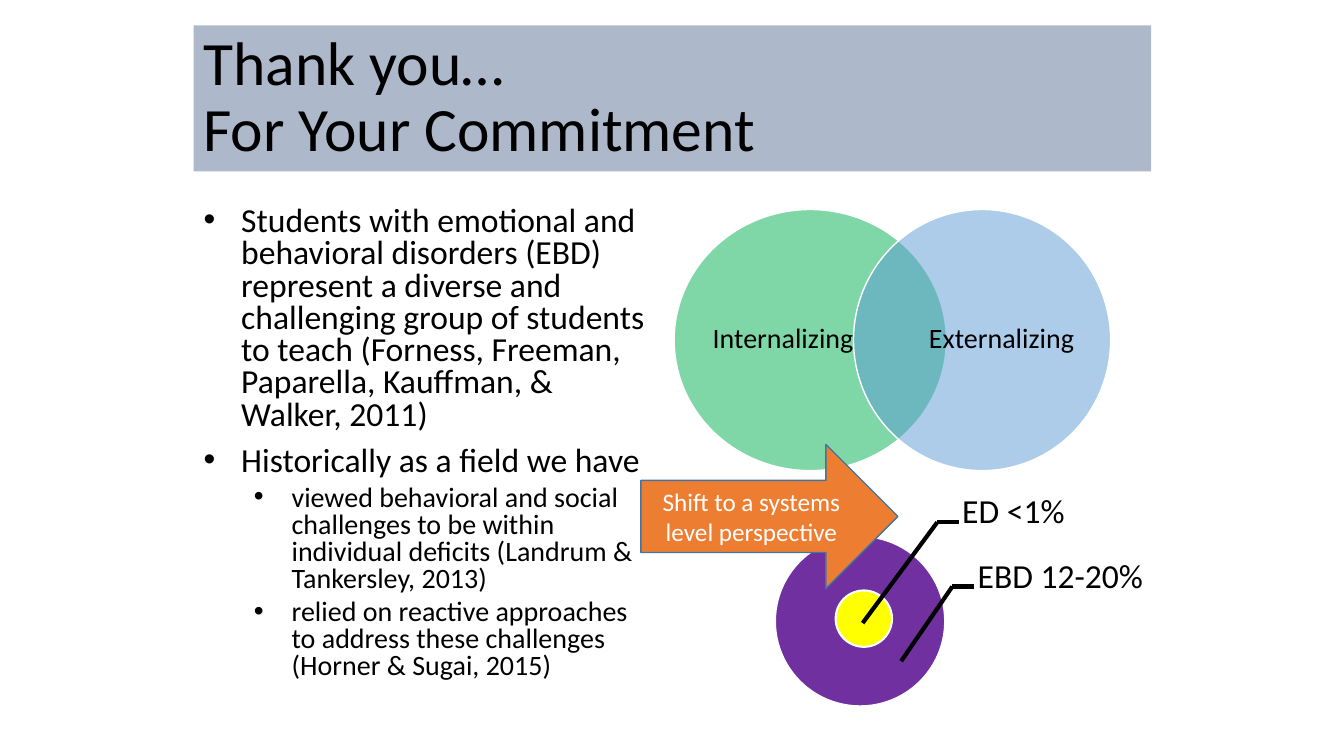
from dataclasses import dataclass

from lxml.etree import SubElement
from pptx import Presentation
from pptx.dml.color import RGBColor
from pptx.enum.shapes import MSO_CONNECTOR, MSO_SHAPE
from pptx.enum.text import MSO_ANCHOR, PP_ALIGN
from pptx.oxml.ns import qn
from pptx.util import Cm, Pt


@dataclass(frozen=True)
class Theme:
    font: str = "Calibri"
    text: str = "000000"
    light: str = "FFFFFF"
    banner: str = "ADB9CA"
    internal: str = "00B050"
    external: str = "5B9BD5"
    outer: str = "7030A0"
    inner: str = "FFFF00"
    arrow: str = "ED7D31"
    arrow_edge: str = "43739E"
    title_size: int = 44
    body_size: int = 24
    detail_size: int = 20
    arrow_size: int = 18


THEME = Theme()
DEFAULT_INSETS = (0.25, 0.13, 0.25, 0.13)
CALLOUT_INSETS = (0.48, 0.08, 0.08, 0.08)
NO_INSETS = (0, 0, 0, 0)

POINTS = [
    (0, "Students with emotional and behavioral disorders (EBD) represent a diverse and "
        "challenging group of students to teach (Forness, Freeman, Paparella, Kauffman, "
        "& Walker, 2011)"),
    (0, "Historically as a field we have"),
    (1, "viewed behavioral and social challenges to be within individual deficits "
        "(Landrum & Tankersley, 2013)"),
    (1, "relied on reactive approaches to address these challenges (Horner & Sugai, 2015)"),
]


def paint(fill, color):
    fill.solid()
    fill.fore_color.rgb = RGBColor.from_string(color)


def style_font(para, size, color=THEME.text):
    para.font.name = THEME.font
    para.font.size = Pt(size)
    para.font.color.rgb = RGBColor.from_string(color)


def add_box(page, area, insets=DEFAULT_INSETS, anchor=MSO_ANCHOR.MIDDLE):
    box = page.shapes.add_textbox(*map(Cm, area))
    frame = box.text_frame
    frame.word_wrap = True
    frame.vertical_anchor = anchor
    frame.margin_left, frame.margin_top, frame.margin_right, frame.margin_bottom = map(Cm, insets)
    return box


def add_label(page, area, text, size, insets=DEFAULT_INSETS, align=PP_ALIGN.LEFT):
    box = add_box(page, area, insets)
    para = box.text_frame.paragraphs[0]
    para.text = text
    para.alignment = align
    para.line_spacing = 0.9
    style_font(para, size)
    return box


def add_figure(page, kind, area, color, edge, edge_width, opacity=100):
    figure = page.shapes.add_shape(kind, *map(Cm, area))
    figure.shadow.inherit = False
    paint(figure.fill, color)
    paint(figure.line.fill, edge)
    figure.line.width = Pt(edge_width)
    if opacity < 100:
        shade = figure._element.spPr.find(qn("a:solidFill"))[0]
        SubElement(shade, qn("a:alpha"), val=str(opacity * 1000))
    return figure


def add_line(page, start, end):
    line = page.shapes.add_connector(MSO_CONNECTOR.STRAIGHT, *map(Cm, start + end))
    paint(line.line.fill, THEME.text)
    line.line.width = Pt(3)
    SubElement(line._element.spPr, qn("a:effectLst"))


def add_callout(page, area, text, elbow, target):
    add_label(page, area, text, THEME.body_size, CALLOUT_INSETS)
    add_line(page, elbow, (elbow[0] + 0.54, elbow[1]))
    add_line(page, elbow, target)


def add_points(page, area):
    frame = add_box(page, area, anchor=MSO_ANCHOR.TOP).text_frame
    for index, (level, text) in enumerate(POINTS):
        para = frame.add_paragraph() if index else frame.paragraphs[0]
        para.text = text
        para.level = level
        para.line_spacing = 0.8
        para.space_before = Pt((5 if level else 10) if index else 0)
        properties = para._p.get_or_add_pPr()
        properties.set("marL", str(Cm(0.95 + 1.27 * level)))
        properties.set("indent", str(Cm(-0.95)))
        SubElement(properties, qn("a:buFont"), typeface="Arial")
        SubElement(properties, qn("a:buChar"), char="•")
        style_font(para, THEME.detail_size if level else THEME.body_size)


def add_venn(page):
    for circle, color, label, text, align in (
        ((16.99, 5.28, 6.86, 6.58), THEME.internal, (17.96, 6.05, 3.96, 5.03),
         "Internalizing", PP_ALIGN.LEFT),
        ((21.51, 5.28, 6.48, 6.58), THEME.external, (23.34, 6.05, 3.73, 5.03),
         "Externalizing", PP_ALIGN.RIGHT),
    ):
        add_figure(page, MSO_SHAPE.OVAL, circle, color, THEME.light, 1, opacity=50)
        add_label(page, label, text, THEME.detail_size, NO_INSETS, align)


def add_target(page):
    for circle, color in (
        ((19.53, 13.51, 4.29, 4.29), THEME.outer),
        ((21.06, 14.88, 1.42, 1.42), THEME.inner),
    ):
        add_figure(page, MSO_SHAPE.OVAL, circle, color, THEME.light, 1.5)
    add_callout(page, (23.77, 12.34, 4.55, 1.17), "ED <1%", (23.62, 13.16), (21.74, 15.7))
    add_callout(page, (24.16, 13.67, 5.26, 1.78), "EBD 12-20%", (24, 14.78), (22.71, 16.66))


def add_shift_arrow(page):
    arrow = add_figure(page, MSO_SHAPE.RIGHT_ARROW, (16.15, 11.2, 6.48, 3.63),
                       THEME.arrow, THEME.arrow_edge, 1)
    arrow.text_frame.word_wrap = True
    arrow.text_frame.vertical_anchor = MSO_ANCHOR.MIDDLE
    para = arrow.text_frame.paragraphs[0]
    para.text = "Shift to a systems level perspective"
    para.alignment = PP_ALIGN.CENTER
    style_font(para, THEME.arrow_size, THEME.light)


def main():
    deck = Presentation()
    deck.slide_width, deck.slide_height = Cm(33.87), Cm(19.05)
    page = deck.slides.add_slide(deck.slide_layouts[6])
    paint(page.background.fill, THEME.light)
    title = add_label(page, (4.88, 0.64, 24.13, 3.68), "Thank you…\vFor Your Commitment",
                      THEME.title_size)
    paint(title.fill, THEME.banner)
    add_venn(page)
    add_target(page)
    add_points(page, (4.88, 5.08, 11.91, 13.36))
    add_shift_arrow(page)
    deck.save("out.pptx")


if __name__ == "__main__":
    main()
